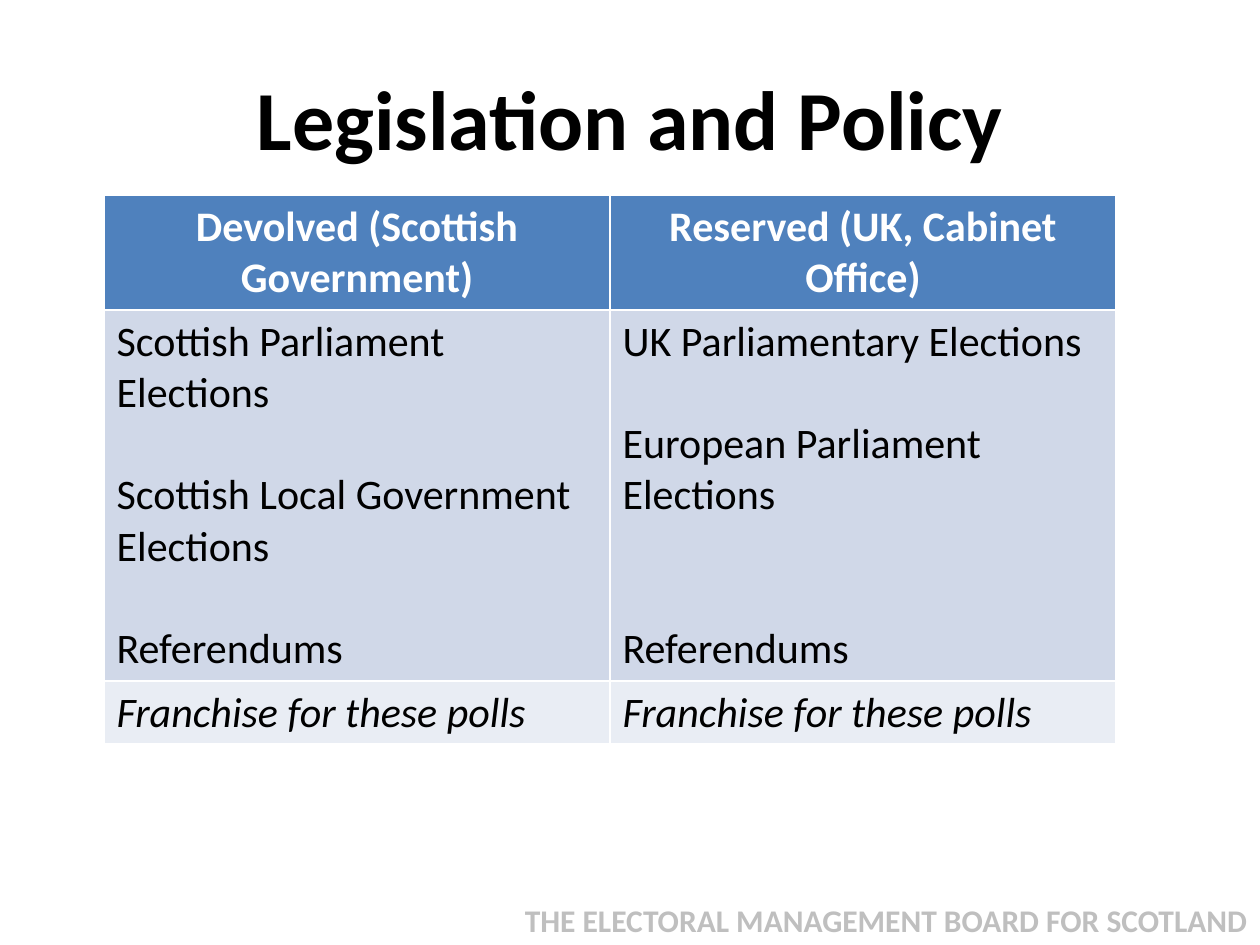
import pptx
import pptx.util
import pptx.dml.color
import pptx.enum.text

RGB = pptx.dml.color.RGBColor
ALIGN = pptx.enum.text.PP_ALIGN
ANCHOR = pptx.enum.text.MSO_ANCHOR

BLACK = RGB(0x00, 0x00, 0x00)
WHITE = RGB(0xFF, 0xFF, 0xFF)
GREY = RGB(0xBF, 0xBF, 0xBF)
BLUE = RGB(0x4F, 0x81, 0xBD)
PALE = RGB(0xD0, 0xD8, 0xE8)
LIGHT = RGB(0xE9, 0xED, 0xF4)

LINE = 29.3  # height of one 24 pt text line, in points


def px(n):
    return pptx.util.Emu(round(n * 914400 / 126))


class Deck:
    face = "Calibri"

    def __init__(self, wide, high):
        self.file = pptx.Presentation()
        self.file.slide_width = px(wide)
        self.file.slide_height = px(high)
        self.slide = self.file.slides.add_slide(self.file.slide_layouts[5])

    def style(self, para, text, align, color, **form):
        para.text = text
        para.alignment = align
        font = para.font
        for key, val in {"name": self.face, **form}.items():
            setattr(font, key, pptx.util.Pt(val) if key == "size" else val)
        font.color.rgb = color

    def title(self, box, text):
        shape = self.slide.shapes.title
        for key, val in zip(("left", "top", "width", "height"), box):
            setattr(shape, key, px(val))
        frame = shape.text_frame
        frame.vertical_anchor = ANCHOR.MIDDLE
        self.style(frame.paragraphs[0], text, ALIGN.CENTER, BLACK, size=48, bold=True)

    def label(self, box, text):
        frame = self.slide.shapes.add_textbox(*map(px, box)).text_frame
        frame.word_wrap = True
        self.style(frame.paragraphs[0], text, ALIGN.RIGHT, GREY, size=18, bold=True)

    def cell(self, cell, items, fill, align, color, **form):
        """Each item is a text and the number of lines left free above it."""
        cell.fill.solid()
        cell.fill.fore_color.rgb = fill
        frame = cell.text_frame
        for i, (text, gap) in enumerate(items):
            para = frame.add_paragraph() if i else frame.paragraphs[0]
            if gap:
                para.space_before = pptx.util.Pt(round(gap * LINE, 1))
            self.style(para, text, align, color, size=24, **form)

    def table(self, box, highs, rows, looks):
        grid = self.slide.shapes.add_table(len(rows), len(rows[0]), *map(px, box)).table
        for r, (high, row, look) in enumerate(zip(highs, rows, looks)):
            grid.rows[r].height = px(high)
            for c, items in enumerate(row):
                self.cell(grid.cell(r, c), items, **look)


def main():
    deck = Deck(1260, 945)

    # Title and footer
    deck.title((63, 38, 1134, 157), "Legislation and Policy")
    deck.label((451, 895, 809, 50), "THE ELECTORAL MANAGEMENT BOARD FOR SCOTLAND")

    # Table of powers: header, polls, franchise
    polls = [("Franchise for these polls", 0)]
    rows = [
        [[("Devolved (Scottish Government)", 0)],
         [("Reserved (UK, Cabinet Office)", 0)]],
        [[("Scottish Parliament Elections", 0),
          ("Scottish Local Government Elections", 1),
          ("Referendums", 1)],
         [("UK Parliamentary Elections", 0),
          ("European Parliament Elections", 1),
          ("Referendums", 2)]],
        [polls, polls],
    ]
    looks = [
        dict(fill=BLUE, align=ALIGN.CENTER, color=WHITE, bold=True),
        dict(fill=PALE, align=ALIGN.LEFT, color=BLACK, bold=False),
        dict(fill=LIGHT, align=ALIGN.LEFT, color=BLACK, bold=False, italic=True),
    ]
    highs = (115, 371, 63)
    deck.table((104, 195, 1012, sum(highs)), highs, rows, looks)

    deck.file.save("out.pptx")


if __name__ == "__main__":
    main()
